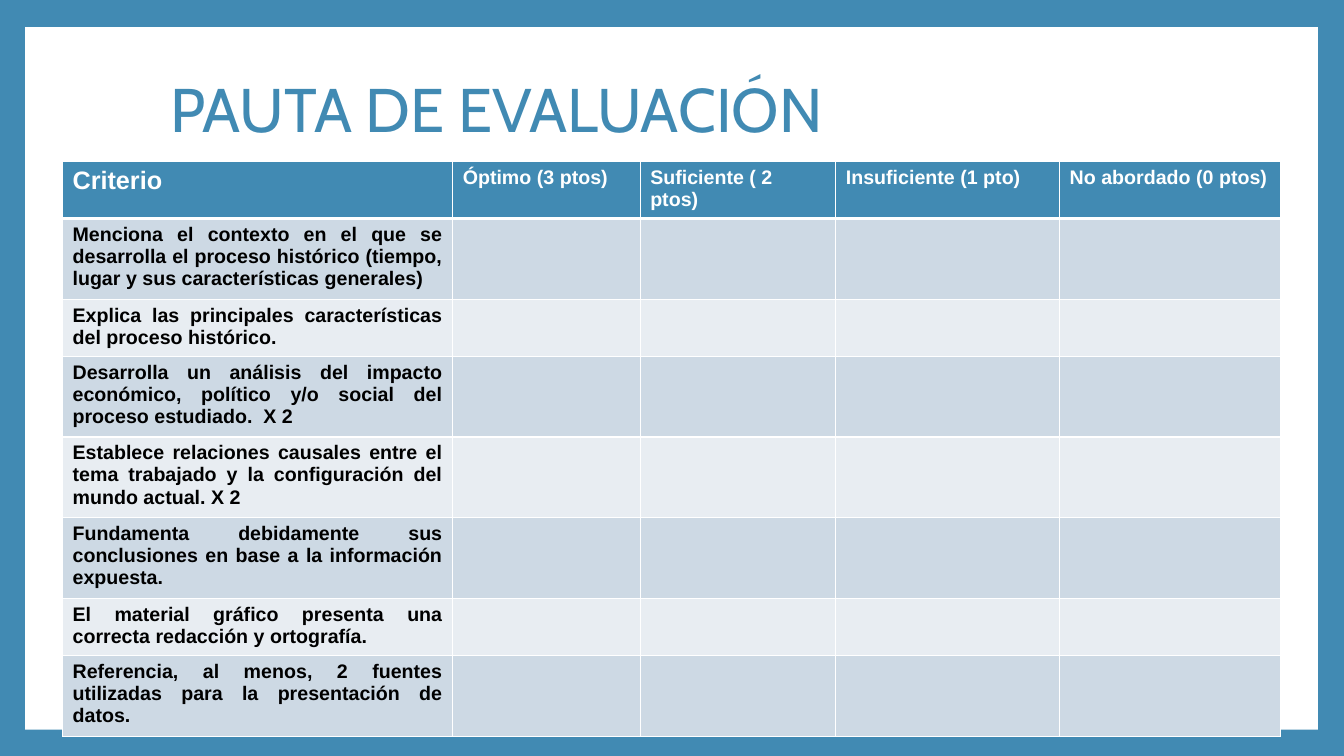
import pptx
import pptx.dml.color
import pptx.enum.shapes
import pptx.enum.text
import pptx.util
from lxml import etree

INCH = pptx.util.Inches
ALIGN = pptx.enum.text.PP_ALIGN
BLUE, WHITE, BLACK = "418AB3", "FFFFFF", "000000"
BANDS = ["CDD9E4", "E8EDF2"]
COLUMN_WIDTHS = [3.87, 1.86, 1.94, 2.22, 2.19]
ROW_HEIGHT = 0.41
LEVELS = ["Óptimo (3 ptos)", "Suficiente ( 2 ptos)", "Insuficiente (1 pto)", "No abordado (0 ptos)"]
CRITERIA = [
    "Menciona el contexto en el que se desarrolla el proceso histórico (tiempo, lugar y sus características generales)",
    "Explica las principales características del proceso histórico.",
    "Desarrolla un análisis del impacto económico, político y/o social del proceso estudiado.  X 2",
    "Establece relaciones causales entre el tema trabajado y la configuración del mundo actual. X 2",
    "Fundamenta debidamente sus conclusiones en base a la información expuesta.",
    "El material gráfico presenta una correcta redacción y ortografía.",
    "Referencia, al menos, 2 fuentes utilizadas para la presentación de datos.",
]


def paint(fill, color):
    fill.solid()
    fill.fore_color.rgb = pptx.dml.color.RGBColor.from_string(color)


def write(frame, text, size, color, font, bold=False, align=ALIGN.LEFT):
    para = frame.paragraphs[0]
    para.alignment = align
    span = para.add_run()
    span.text = text
    span.font.size = pptx.util.Pt(size)
    span.font.name = font
    span.font.bold = bold
    paint(span.font.fill, color)
    return para


def draw_frame(page, box):
    paint(page.background.fill, BLUE)
    panel = page.shapes.add_shape(pptx.enum.shapes.MSO_SHAPE.RECTANGLE, *map(INCH, box))
    panel.shadow.inherit = False
    paint(panel.fill, WHITE)
    panel.line.fill.background()


def draw_title(page, box):
    frame = page.shapes.add_textbox(*map(INCH, box)).text_frame
    frame.word_wrap = True
    frame.vertical_anchor = pptx.enum.text.MSO_ANCHOR.MIDDLE
    write(frame, "PAUTA DE EVALUACIÓN", 44, BLUE, "Cabin").line_spacing = 0.9


def style_cell(cell, color, top, bottom):
    properties = cell._tc.get_or_add_tcPr()
    for side, points in zip("LRTB", [1, 1, top, bottom]):
        properties.append(pptx.oxml.parse_xml(
            f'<a:ln{side} xmlns:a="http://schemas.openxmlformats.org/drawingml/2006/main" '
            f'w="{pptx.util.Pt(points)}"><a:solidFill><a:srgbClr val="{WHITE}"/></a:solidFill></a:ln{side}>'))
    paint(cell.fill, color)


def draw_rubric(page, left, top):
    row_count = len(CRITERIA) + 1
    size = [sum(COLUMN_WIDTHS), ROW_HEIGHT * row_count]
    table = page.shapes.add_table(
        row_count, len(COLUMN_WIDTHS), *map(INCH, [left, top, *size])).table
    for column, width in zip(table.columns, COLUMN_WIDTHS):
        column.width = INCH(width)
    for index, row in enumerate(table.rows):
        row.height = INCH(ROW_HEIGHT)
        color = BANDS[(index - 1) % 2] if index else BLUE
        for cell in row.cells:
            style_cell(cell, color, 3 if index == 1 else 1, 1 if index else 3)
    write(table.cell(0, 0).text_frame, "Criterio", 18, WHITE, "Arial", True)
    for index, level in enumerate(LEVELS, 1):
        write(table.cell(0, index).text_frame, level, 14, WHITE, "Arial", True)
    for index, criterion in enumerate(CRITERIA, 1):
        write(table.cell(index, 0).text_frame, criterion, 14, BLACK, "Arial", True, ALIGN.JUSTIFY)


def main():
    deck = pptx.Presentation()
    deck.slide_width, deck.slide_height = INCH(13.33), INCH(7.5)
    page = deck.slides.add_slide(deck.slide_layouts[6])
    draw_frame(page, [0.25, 0.27, 12.82, 6.97])
    draw_title(page, [1.59, 0.4, 10.5, 1.43])
    draw_rubric(page, 0.62, 1.6)
    deck.save("out.pptx")


if __name__ == "__main__":
    main()
